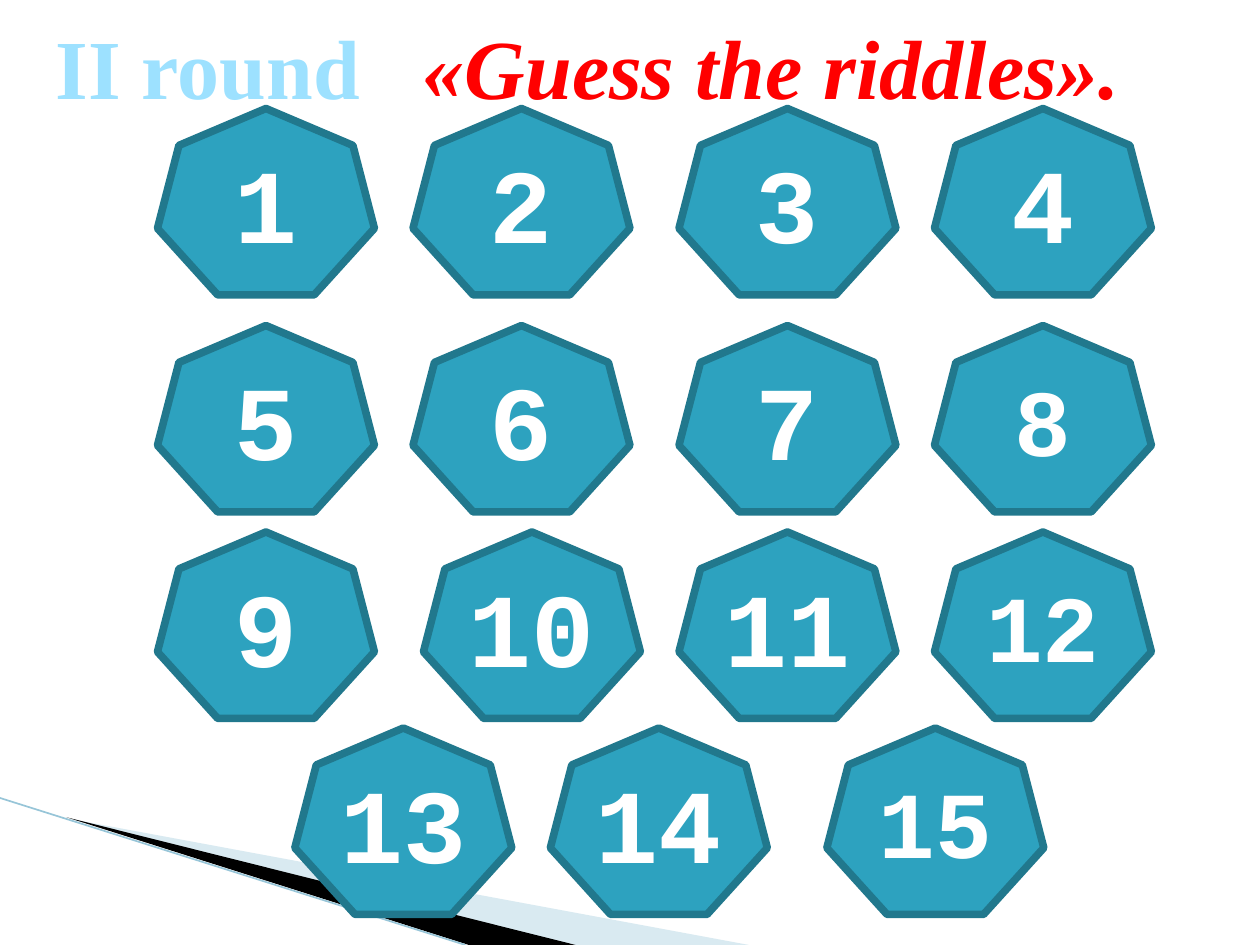
from pptx import Presentation
from pptx.dml.color import RGBColor
from pptx.enum.shapes import MSO_CONNECTOR, MSO_SHAPE
from pptx.enum.text import MSO_ANCHOR, MSO_AUTO_SIZE, PP_ALIGN
from pptx.oxml.ns import qn
from pptx.util import Pt
from lxml.etree import SubElement

WHITE = RGBColor(0xFF, 0xFF, 0xFF)
BLACK = RGBColor(0x00, 0x00, 0x00)
RED = RGBColor(0xFF, 0x00, 0x00)
SKY = RGBColor(0x9D, 0xE1, 0xFF)
TEAL = RGBColor(0x2D, 0xA2, 0xBF)
DARK_TEAL = RGBColor(0x21, 0x78, 0x8D)
PALE_BLUE = RGBColor(0xA0, 0xCB, 0xDC)
LINE_BLUE = RGBColor(0x97, 0xC5, 0xD8)

TITLE_FONT = {"name": "Times New Roman", "size": Pt(48), "bold": True}
NUMBER_FONT = {"name": "Courier New", "bold": True}
TILE_WIDTH, TILE_HEIGHT = 124, 106.5

# Top of each row, then the left edges of its tiles
TILE_ROWS = [
    (62, (90, 236, 388, 534)),
    (186, (90, 236, 388, 534)),
    (304, (90, 242, 388, 534)),
    (416, (168.5, 314.5, 472.5)),
]
SMALLER_NUMBERS = {8, 12, 15}


def add_run(paragraph, text, color, **formats):
    run = paragraph.add_run()
    run.text = text
    for name, value in formats.items():
        setattr(run.font, name, value)
    run.font.color.rgb = color
    return run


def add_swoosh(slide, points, color, opacity=None):
    """Add a filled outline; opacity is a percentage."""
    builder = slide.shapes.build_freeform(*points[0], scale=Pt(1))
    builder.add_line_segments(points[1:])
    shape = builder.convert_to_shape()
    shape.shadow.inherit = False
    shape.fill.solid()
    shape.fill.fore_color.rgb = color
    shape.line.fill.background()
    if opacity:
        color_element = shape.fill._xPr.find(qn("a:solidFill"))[0]
        SubElement(color_element, qn("a:alpha"), val=str(opacity * 1000))


def add_line(slide, start, end, color, width):
    ends = [Pt(value) for value in (*start, *end)]
    line = slide.shapes.add_connector(MSO_CONNECTOR.STRAIGHT, *ends)
    line.line.color.rgb = color
    line.line.width = Pt(width)
    SubElement(line._element.spPr, qn("a:effectLst"))


def fill_title(slide):
    title = slide.shapes.title
    title.left, title.top, title.width, title.height = Pt(14), Pt(0), Pt(644), Pt(124)
    frame = title.text_frame
    frame.word_wrap = True
    frame.auto_size = MSO_AUTO_SIZE.NONE
    frame.vertical_anchor = MSO_ANCHOR.TOP
    frame.margin_top = Pt(9)
    paragraph = frame.paragraphs[0]
    paragraph.alignment = PP_ALIGN.CENTER
    add_run(paragraph, "ІІ round", SKY, **TITLE_FONT)
    gap = add_run(paragraph, " ", SKY, **TITLE_FONT)
    gap._r.get_or_add_rPr().set("spc", "2400")
    add_run(paragraph, "«Guess the riddles».", RED, italic=True, **TITLE_FONT)


def add_tile(slide, number, left, top):
    tile = slide.shapes.add_shape(
        MSO_SHAPE.HEPTAGON, Pt(left), Pt(top), Pt(TILE_WIDTH), Pt(TILE_HEIGHT))
    tile.shadow.inherit = False
    tile.fill.solid()
    tile.fill.fore_color.rgb = TEAL
    tile.line.color.rgb = DARK_TEAL
    tile.line.width = Pt(4.33)
    tile.text_frame.vertical_anchor = MSO_ANCHOR.MIDDLE
    paragraph = tile.text_frame.paragraphs[0]
    paragraph.alignment = PP_ALIGN.CENTER
    size = Pt(54 if number in SMALLER_NUMBERS else 60)
    add_run(paragraph, str(number), WHITE, size=size, **NUMBER_FONT)


def main():
    presentation = Presentation()
    presentation.slide_width, presentation.slide_height = Pt(720), Pt(540)
    slide = presentation.slides.add_slide(presentation.slide_layouts[5])

    add_swoosh(slide, [(39.6, 468), (428.4, 540), (328.3, 540)], PALE_BLUE, 40)
    add_swoosh(slide, [(38.2, 467.3), (329, 540), (267.8, 540)], BLACK)
    add_line(slide, (0, 456), (266, 540), LINE_BLUE, 0.95)
    fill_title(slide)

    number = 0
    for top, lefts in TILE_ROWS:
        for left in lefts:
            number += 1
            add_tile(slide, number, left, top)

    presentation.save("out.pptx")


if __name__ == "__main__":
    main()
